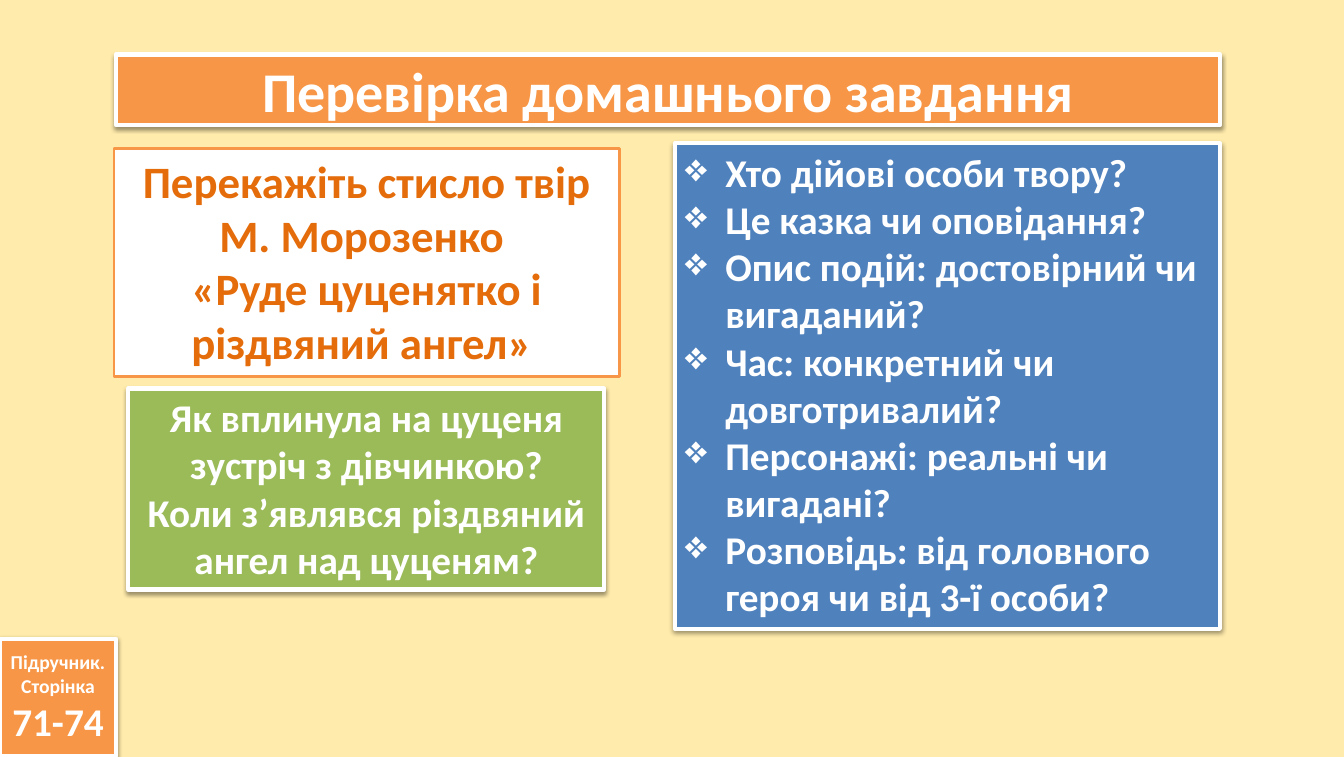
from dataclasses import dataclass

from lxml import etree
from pptx import Presentation
from pptx import util as u
from pptx.dml.color import RGBColor
from pptx.enum import shapes, text
from pptx.oxml.ns import qn

PX = u.Inches(1) // 100


@dataclass(frozen=True)
class Theme:
    font: str = "Calibri"
    background: str = "FFEBAB"
    white: str = "FFFFFF"
    shadow: str = "000000"
    orange: str = "F79646"
    dark_orange: str = "E46C0A"
    blue: str = "4F81BD"
    green: str = "9BBB59"
    title: int = 40
    task: int = 32
    body: int = 28
    label: int = 14


THEME = Theme()


@dataclass(frozen=True)
class Line:
    wording: str
    size: int = THEME.body


@dataclass(frozen=True)
class Panel:
    left: int
    top: int
    width: int
    height: int
    fill: str
    lines: list[Line]
    border: str = THEME.white
    border_pt: int = 3
    ink: str = THEME.white
    raised: bool = True
    grows: bool = True
    bullet: str = ""


PANELS = [
    Panel(115, 54, 1094, 70, THEME.orange,
          [Line("Перевірка домашнього завдання", THEME.title)], grows=False),
    Panel(0, 633, 115, 116, THEME.orange,
          [Line("Підручник.", THEME.label), Line("Сторінка", THEME.label), Line("71-74")],
          grows=False),
    Panel(113, 147, 501, 226, THEME.white,
          [Line("Перекажіть стисло твір М. Морозенко ", THEME.task),
           Line("«Руде цуценятко і різдвяний ангел» ", THEME.task)],
          border=THEME.orange, border_pt=2, ink=THEME.dark_orange, raised=False),
    Panel(669, 142, 540, 481, THEME.blue,
          [Line("Хто дійові особи твору?"),
           Line("Це казка чи оповідання?"),
           Line("Опис подій: достовірний чи вигаданий?"),
           Line("Час: конкретний чи довготривалий?"),
           Line("Персонажі: реальні чи вигадані?"),
           Line("Розповідь: від головного героя чи від 3-ї особи?")],
          bullet="❖"),
    Panel(127, 385, 472, 199, THEME.green,
          [Line("Як вплинула на цуценя зустріч з дівчинкою?"),
           Line("Коли з’являвся різдвяний ангел над цуценям?")]),
]


def color(code: str) -> RGBColor:
    return RGBColor.from_string(code)


def add_shadow(shape) -> None:
    effects = shape._element.spPr.find(qn("a:effectLst"))
    outer = etree.SubElement(effects, qn("a:outerShdw"), blurRad=str(u.Pt(3.1)),
                             dist=str(u.Pt(1.6)), dir="5400000", rotWithShape="0")
    tint = etree.SubElement(outer, qn("a:srgbClr"), val=THEME.shadow)
    etree.SubElement(tint, qn("a:alpha"), val="38000")


def add_bullet(paragraph, bullet: str) -> None:
    """Give the paragraph a bullet with a hanging indent."""
    properties = paragraph._p.get_or_add_pPr()
    indent = 40 * PX
    properties.set("marL", str(indent))
    properties.set("indent", str(-indent))
    etree.SubElement(properties, qn("a:buChar"), char=bullet)


def write_lines(frame, panel: Panel) -> None:
    frame.word_wrap = True
    frame.vertical_anchor = text.MSO_ANCHOR.TOP if panel.grows else text.MSO_ANCHOR.MIDDLE
    if panel.grows:
        frame.auto_size = text.MSO_AUTO_SIZE.SHAPE_TO_FIT_TEXT
    frame.text = "\n".join(line.wording for line in panel.lines)
    for paragraph, line in zip(frame.paragraphs, panel.lines):
        paragraph.alignment = text.PP_ALIGN.LEFT if panel.bullet else text.PP_ALIGN.CENTER
        if panel.bullet:
            add_bullet(paragraph, panel.bullet)
        for run in paragraph.runs:
            run.font.name = THEME.font
            run.font.size = u.Pt(line.size)
            run.font.bold = True
            run.font.color.rgb = color(panel.ink)


def draw_panel(slide, panel: Panel) -> None:
    box = [PX * side for side in (panel.left, panel.top, panel.width, panel.height)]
    shape = slide.shapes.add_shape(shapes.MSO_SHAPE.RECTANGLE, *box)
    shape.fill.solid()
    shape.fill.fore_color.rgb = color(panel.fill)
    shape.line.color.rgb = color(panel.border)
    shape.line.width = u.Pt(panel.border_pt)
    shape.shadow.inherit = False
    if panel.raised:
        add_shadow(shape)
    write_lines(shape.text_frame, panel)


def main() -> None:
    deck = Presentation()
    deck.slide_width, deck.slide_height = 1332 * PX, 750 * PX
    slide = deck.slides.add_slide(deck.slide_layouts[6])
    slide.background.fill.solid()
    slide.background.fill.fore_color.rgb = color(THEME.background)
    for panel in PANELS:
        draw_panel(slide, panel)
    deck.save("out.pptx")


if __name__ == "__main__":
    main()
